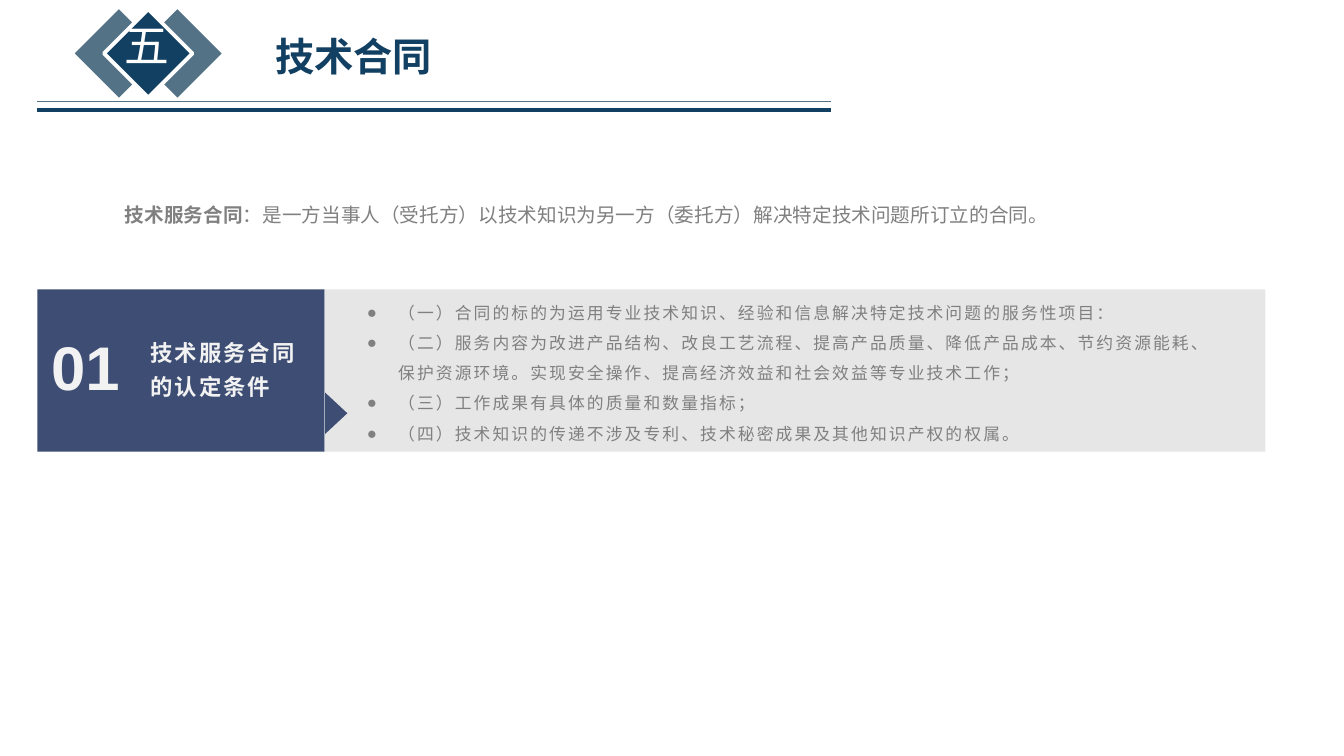
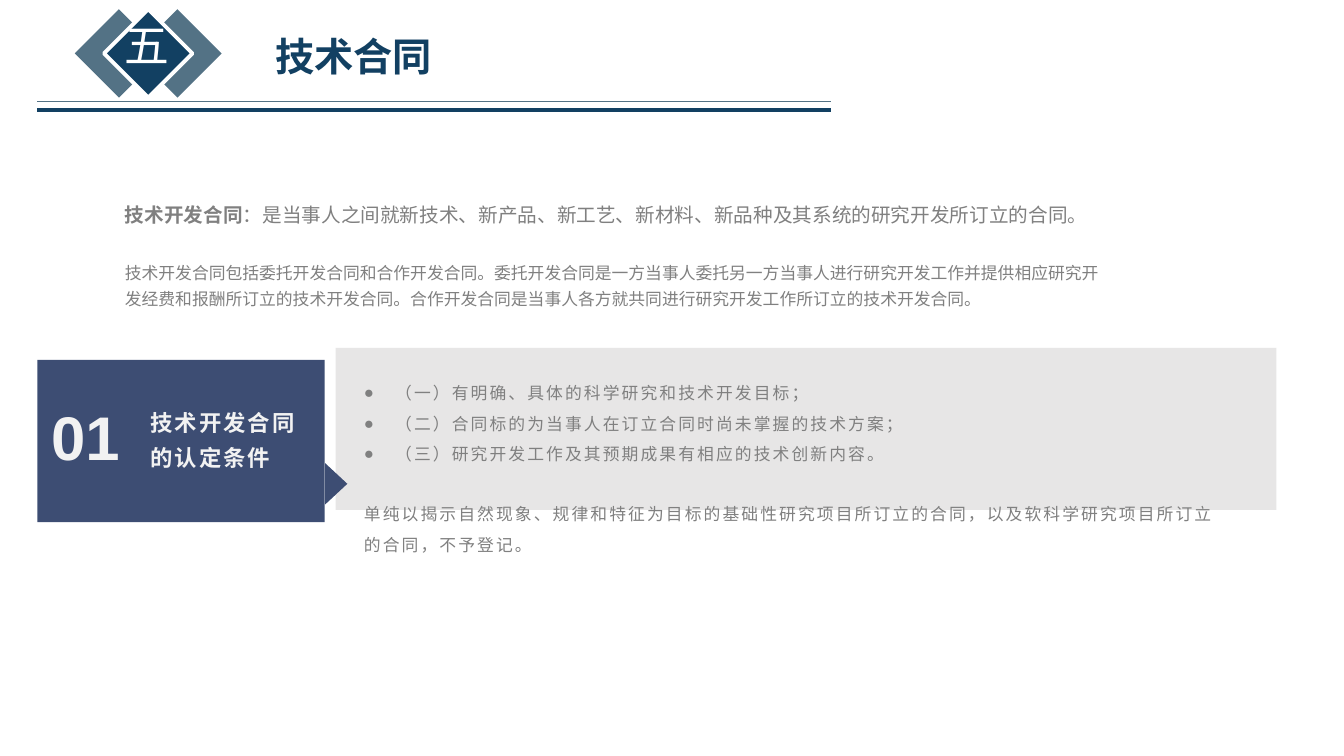
from dataclasses import dataclass

from lxml.etree import SubElement
from pptx import Presentation
from pptx.dml.color import RGBColor
from pptx.enum.shapes import MSO_CONNECTOR, MSO_SHAPE
from pptx.enum.text import MSO_ANCHOR, MSO_AUTO_SIZE
from pptx.oxml.ns import qn
from pptx.shapes.autoshape import Shape
from pptx.slide import Slide
from pptx.util import Pt

PX = 9144  # EMU per px, 100 px to the inch

NAVY = RGBColor(0x12, 0x40, 0x62)
STEEL = RGBColor(0x53, 0x72, 0x85)
INDIGO = RGBColor(0x3D, 0x4D, 0x73)
SILVER = RGBColor(0xE7, 0xE6, 0xE6)
GRAY = RGBColor(0x80, 0x80, 0x80)
PALE = RGBColor(0xF2, 0xF2, 0xF2)
WHITE = RGBColor(0xFF, 0xFF, 0xFF)

HANG = 31
GAP = 21.6


@dataclass(frozen=True)
class Box:
    x: int
    y: int
    w: int
    h: int

    def emu(self) -> tuple[int, int, int, int]:
        return self.x * PX, self.y * PX, self.w * PX, self.h * PX


@dataclass(frozen=True)
class Style:
    font: str
    size: int
    color: RGBColor
    bold: bool = False
    track: int = 0  # hundredths of a point


@dataclass(frozen=True)
class Para:
    runs: tuple[tuple[str, Style], ...]
    lead: float = 1.0
    before: float = 0
    bullet: bool = False


@dataclass(frozen=True)
class Topic:
    intro: tuple[Para, ...]
    label: str
    top: int
    panel: Box
    body: Box
    rules: tuple[Para, ...]


BADGE = Style("Roboto Condensed", 32, WHITE)
TITLE = Style("Montserrat", 28, NAVY, bold=True)
TERM = Style("Roboto Condensed", 14, GRAY, bold=True)
INTRO = Style("Roboto Condensed", 14, GRAY)
DETAIL = Style("Roboto Condensed", 12, GRAY)
NUMBER = Style("Arial", 44, PALE, bold=True)
LABEL = Style("Arial", 16, PALE, bold=True, track=150)
RULE = Style("Arial", 12, GRAY, track=150)


def rule(text: str) -> Para:
    return Para(((text, RULE),), lead=1.5, bullet=True)


TOPICS = (
    Topic(
        intro=(
            Para((
                ("技术服务合同", TERM),
                ("：是一方当事人（受托方）以技术知识为另一方（委托方）解决特定技术问题所订立的合同。", INTRO),
            ), lead=1.3),
        ),
        label="技术服务合同的认定条件",
        top=287,
        panel=Box(322, 287, 933, 161),
        body=Box(361, 287, 856, 177),
        rules=(
            rule("（一）合同的标的为运用专业技术知识、经验和信息解决特定技术问题的服务性项目："),
            rule("（二）服务内容为改进产品结构、改良工艺流程、提高产品质量、降低产品成本、节约资源能耗、"
                 "保护资源环境。实现安全操作、提高经济效益和社会效益等专业技术工作；"),
            rule("（三）工作成果有具体的质量和数量指标；"),
            rule("（四）技术知识的传递不涉及专利、技术秘密成果及其他知识产权的权属。"),
        ),
    ),
    Topic(
        intro=(
            Para((
                ("技术开发合同", TERM),
                ("：是当事人之间就新技术、新产品、新工艺、新材料、新品种及其系统的研究开发所订立的合同。", INTRO),
            ), lead=1.3),
            Para(((
                "技术开发合同包括委托开发合同和合作开发合同。"
                "委托开发合同是一方当事人委托另一方当事人进行研究开发工作并提供相应研究开发经费和报酬所订立的技术开发合同。"
                "合作开发合同是当事人各方就共同进行研究开发工作所订立的技术开发合同。", DETAIL),
            ), lead=1.3, before=GAP),
        ),
        label="技术开发合同的认定条件",
        top=357,
        panel=Box(333, 345, 933, 161),
        body=Box(358, 367, 859, 185),
        rules=(
            rule("（一）有明确、具体的科学研究和技术开发目标；"),
            rule("（二）合同标的为当事人在订立合同时尚未掌握的技术方案；"),
            rule("（三）研究开发工作及其预期成果有相应的技术创新内容。"),
            Para(((
                "单纯以揭示自然现象、规律和特征为目标的基础性研究项目所订立的合同，"
                "以及软科学研究项目所订立的合同，不予登记。", RULE),
            ), lead=1.5, before=GAP),
        ),
    ),
)


def add_text(slide: Slide, box: Box, paras: tuple[Para, ...],
             pad: tuple[int, int] = (10, 5), wrap: bool = True) -> None:
    frame = slide.shapes.add_textbox(*box.emu()).text_frame
    frame.word_wrap = wrap
    frame.auto_size = MSO_AUTO_SIZE.NONE
    frame.vertical_anchor = MSO_ANCHOR.TOP
    frame.margin_left = frame.margin_right = pad[0] * PX
    frame.margin_top = frame.margin_bottom = pad[1] * PX
    for i, item in enumerate(paras):
        para = frame.add_paragraph() if i else frame.paragraphs[0]
        para.line_spacing = item.lead
        if item.before:
            para.space_before = Pt(item.before)
        if item.bullet:
            props = para._p.get_or_add_pPr()
            props.set("marL", str(HANG * PX))
            props.set("indent", str(-HANG * PX))
            SubElement(props, qn("a:buFont")).set("typeface", "Arial")
            SubElement(props, qn("a:buChar")).set("char", "●")
        for text, style in item.runs:
            run = para.add_run()
            run.text = text
            font = run.font
            font.name, font.size, font.bold = style.font, Pt(style.size), style.bold
            font.color.rgb = style.color
            attrs = run._r.get_or_add_rPr()
            attrs.set("lang", "zh-CN")
            if style.track:
                attrs.set("spc", str(style.track))


def add_line(slide: Slide, y: int, color: RGBColor, width: float) -> None:
    line = slide.shapes.add_connector(
        MSO_CONNECTOR.STRAIGHT, 37 * PX, y * PX, 824 * PX, y * PX)
    line.line.color.rgb = color
    line.line.width = Pt(width)
    SubElement(line._element.spPr, qn("a:effectLst"))


def add_solid(slide: Slide, kind: MSO_SHAPE, box: Box, color: RGBColor,
              turn: int = 0) -> Shape:
    shape = slide.shapes.add_shape(kind, *box.emu())
    shape.shadow.inherit = False
    shape.fill.solid()
    shape.fill.fore_color.rgb = color
    shape.line.fill.background()
    shape.rotation = turn
    return shape


def add_head(slide: Slide) -> None:
    add_line(slide, 101, STEEL, 1)
    add_line(slide, 109, NAVY, 3)
    for x, color in ((145, STEEL), (87, STEEL), (116, NAVY)):
        gem = add_solid(slide, MSO_SHAPE.RECTANGLE, Box(x, 22, 62, 62), color, 45)
    gem.line.color.rgb = WHITE
    gem.line.width = Pt(2.75)
    add_text(slide, Box(114, 13, 65, 64), (Para((("五", BADGE),)),), wrap=False)
    add_text(slide, Box(263, 27, 177, 57), (Para((("技术合同", TITLE),)),), wrap=False)


def add_card(slide: Slide, topic: Topic) -> None:
    top = topic.top
    add_solid(slide, MSO_SHAPE.RECTANGLE, Box(37, top, 285, 161), INDIGO)
    add_solid(slide, MSO_SHAPE.RECTANGLE, topic.panel, SILVER)
    add_text(slide, Box(149, top + 41, 147, 70),
             (Para(((topic.label, LABEL),), lead=1.3),), pad=(0, 0))
    add_text(slide, topic.body, topic.rules, pad=(3, 3))
    add_text(slide, Box(41, top + 34, 88, 84), (Para((("01", NUMBER),)),), wrap=False)
    add_solid(slide, MSO_SHAPE.ISOSCELES_TRIANGLE, Box(313, top + 112, 41, 22), INDIGO, 90)


def main() -> None:
    deck = Presentation()
    deck.slide_width, deck.slide_height = 1333 * PX, 750 * PX
    for topic in TOPICS:
        slide = deck.slides.add_slide(deck.slide_layouts[6])
        add_text(slide, Box(114, 189, 992, 150), topic.intro)
        add_head(slide)
        add_card(slide, topic)
    deck.save("out.pptx")


if __name__ == "__main__":
    main()
